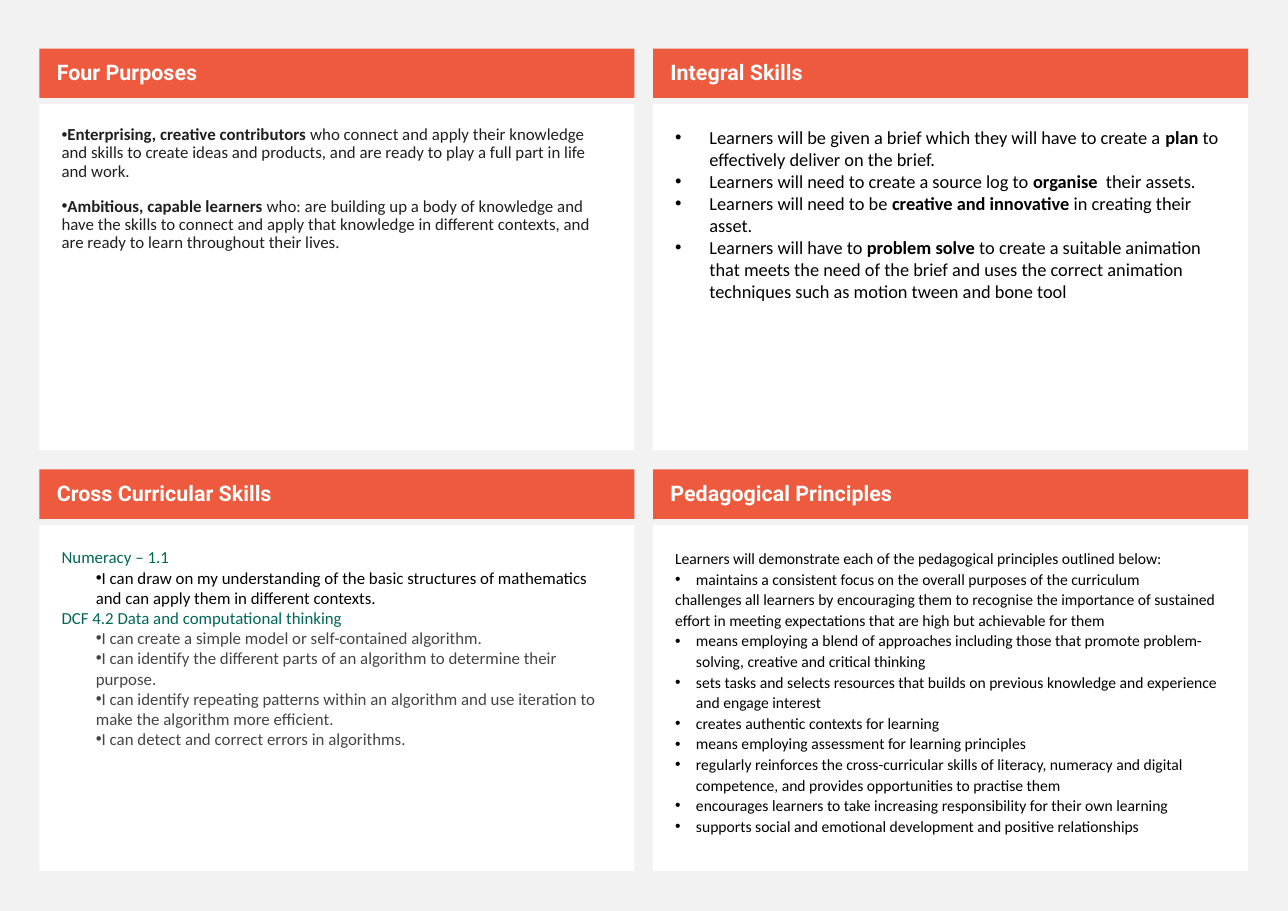
"""Build a four-panel slide of curriculum links for an animation project."""
from lxml import etree
from pptx import Presentation
from pptx.dml.color import RGBColor
from pptx.enum.shapes import MSO_SHAPE as SHAPE
from pptx.enum.text import MSO_ANCHOR as ANCHOR, PP_ALIGN as ALIGN
from pptx.oxml.ns import qn
from pptx.util import Cm, Pt

GREY = RGBColor(0xF2, 0xF2, 0xF2)
ORANGE = RGBColor(0xED, 0x5A, 0x3E)
WHITE = RGBColor(0xFF, 0xFF, 0xFF)
BLACK = RGBColor(0x00, 0x00, 0x00)
CHARCOAL = RGBColor(0x1F, 0x1F, 0x1F)
SLATE = RGBColor(0x44, 0x44, 0x44)
GREEN = RGBColor(0x00, 0x67, 0x58)

# Each line is (colour, bulleted, text); asterisks enclose bold words.
PANELS = [
    {"title": "Four Purposes", "size": 11, "spacing": 0.9, "before": 11,
     "margin": 0, "indent": 0, "lines": [
         (CHARCOAL, True, "*Enterprising, creative contributors *who connect and apply their "
          "knowledge and skills to create ideas and products, and are ready to play a full "
          "part in life and work."),
         (CHARCOAL, True, "*Ambitious, capable learners* who: are building up a body of "
          "knowledge and have the skills to connect and apply that knowledge in different "
          "contexts, and are ready to learn throughout their lives."),
     ]},
    {"title": "Integral Skills", "size": 12, "spacing": 1.0, "before": 0,
     "margin": 0.79, "indent": -0.79, "lines": [
         (BLACK, True, "Learners will be given a brief which they will have to create a "
          "*plan *to effectively deliver on the brief."),
         (BLACK, True, "Learners will need to create a source log to *organise  *their assets."),
         (BLACK, True, "Learners will need to be *creative and innovative* in creating "
          "their asset."),
         (BLACK, True, "Learners will have to* problem solve* to create a suitable animation "
          "that meets the need of the brief and uses the correct animation techniques such "
          "as motion tween and bone tool"),
     ]},
    {"title": "Cross Curricular Skills", "size": 11, "spacing": 1.0, "before": 0,
     "margin": 0.79, "indent": 0, "lines": [
         (GREEN, False, "Numeracy – 1.1"),
         (BLACK, True, "I can draw on my understanding of the basic structures of mathematics "
          "and can apply them in different contexts."),
         (GREEN, False, "DCF 4.2 Data and computational thinking"),
         (SLATE, True, "I can create a simple model or self-contained algorithm."),
         (SLATE, True, "I can identify the different parts of an algorithm to determine "
          "their purpose."),
         (SLATE, True, "I can identify repeating patterns within an algorithm and use "
          "iteration to make the algorithm more efficient."),
         (SLATE, True, "I can detect and correct errors in algorithms."),
     ]},
    {"title": "Pedagogical Principles", "size": 10.2, "spacing": 1.1, "before": 0,
     "margin": 0.48, "indent": -0.48, "lines": [
         (BLACK, False, "Learners will demonstrate each of the pedagogical principles "
          "outlined below:"),
         (BLACK, True, "maintains a consistent focus on the overall purposes of the curriculum"),
         (BLACK, False, "challenges all learners by encouraging them to recognise the "
          "importance of sustained effort in meeting expectations that are high but "
          "achievable for them"),
         (BLACK, True, "means employing a blend of approaches including those that promote "
          "problem-solving, creative and critical thinking"),
         (BLACK, True, "sets tasks and selects resources that builds on previous knowledge "
          "and experience and engage interest"),
         (BLACK, True, "creates authentic contexts for learning"),
         (BLACK, True, "means employing assessment for learning principles"),
         (BLACK, True, "regularly reinforces the cross-curricular skills of literacy, "
          "numeracy and digital competence, and provides opportunities to practise them"),
         (BLACK, True, "encourages learners to take increasing responsibility for their "
          "own learning"),
         (BLACK, True, "supports social and emotional development and positive relationships"),
     ]},
]

LEFT, TOP = 0.91, 1.12
COLUMN_STEP, ROW_STEP = 14.15, 9.7
PANEL_W, HEADER_H, BODY_H = 13.72, 1.14, 7.98
BODY_OFFSET = 1.28


def add_box(slide, x, y, height, fill, anchor, insets):
    sp = slide.shapes.add_shape(SHAPE.RECTANGLE, Cm(x), Cm(y), Cm(PANEL_W), Cm(height))
    sp.shadow.inherit = False
    sp.fill.solid()
    sp.fill.fore_color.rgb = fill
    sp.line.fill.background()
    tf = sp.text_frame
    tf.word_wrap = True
    tf.vertical_anchor = anchor
    tf.margin_left, tf.margin_top, tf.margin_right, tf.margin_bottom = map(Cm, insets)
    return tf


def add_bullet(p, margin, indent):
    pPr = p._p.get_or_add_pPr()
    pPr.set("marL", str(Cm(margin)))
    pPr.set("indent", str(Cm(indent)))
    etree.SubElement(pPr, qn("a:buFont")).set("typeface", "Arial")
    etree.SubElement(pPr, qn("a:buChar")).set("char", "•")


def write(p, text, font, size, color, spacing, before):
    p.alignment = ALIGN.LEFT
    p.line_spacing = spacing
    p.space_before = Pt(before)
    for i, part in enumerate(text.split("*")):
        if part:
            r = p.add_run()
            r.text = part
            r.font.name = font
            r.font.size = Pt(size)
            r.font.bold = i % 2 == 1
            r.font.color.rgb = color


def add_panel(slide, panel, x, y):
    tf = add_box(slide, x, y + BODY_OFFSET, BODY_H, WHITE, ANCHOR.TOP, [0.51] * 4)
    for i, (color, bulleted, text) in enumerate(panel["lines"]):
        p = tf.add_paragraph() if i else tf.paragraphs[0]
        write(p, text, "Calibri", panel["size"], color, panel["spacing"], panel["before"])
        if bulleted:
            add_bullet(p, panel["margin"], panel["indent"])
    tf = add_box(slide, x, y, HEADER_H, ORANGE, ANCHOR.MIDDLE, [0.4, 0.13, 0.25, 0.13])
    write(tf.paragraphs[0], f"*{panel['title']}*", "Roboto", 14, WHITE, 0.9, 11)


def main():
    prs = Presentation()
    prs.slide_width, prs.slide_height = Cm(29.7), Cm(21)
    slide = prs.slides.add_slide(prs.slide_layouts[6])
    slide.background.fill.solid()
    slide.background.fill.fore_color.rgb = GREY
    for i, panel in enumerate(PANELS):
        row, column = divmod(i, 2)
        add_panel(slide, panel, LEFT + column * COLUMN_STEP, TOP + row * ROW_STEP)
    prs.save("out.pptx")


if __name__ == "__main__":
    main()
